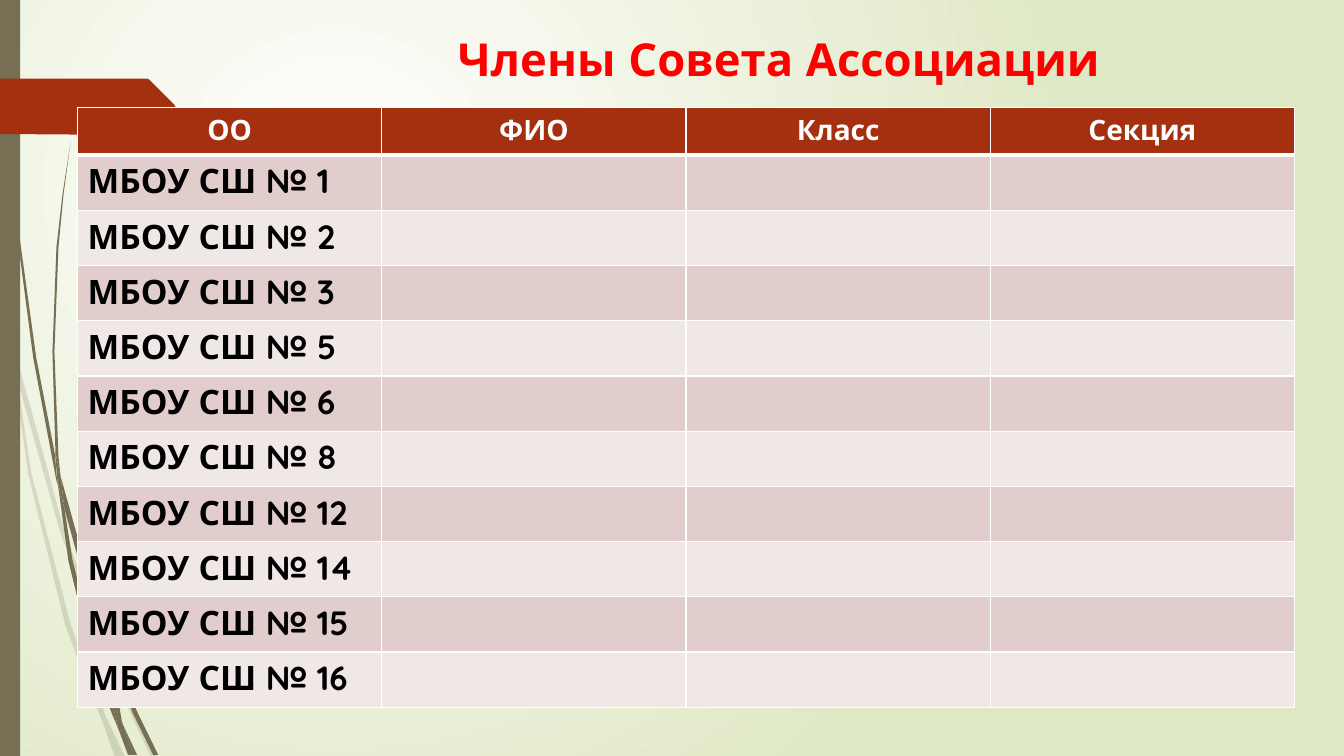
from lxml.etree import SubElement
from pptx import Presentation
from pptx.dml.color import RGBColor
from pptx.enum.shapes import MSO_SHAPE
from pptx.enum.text import MSO_ANCHOR, PP_ALIGN
from pptx.oxml.ns import qn
from pptx.util import Inches, Pt

TITLE = "Члены Совета Ассоциации"
HEADERS = ["ОО", "ФИО", "Класс", "Секция"]
SCHOOLS = [1, 2, 3, 5, 6, 8, 12, 14, 15, 16]
FONT = "Quicksand"
OLIVE, RUST, WHITE = "766F54", "A53010", "FFFFFF"
BANDS = ["E1CDCC", "F0E8E7"]

# Outlines in hundredths of an inch
PALE_WISPS = [
    [(11, 350), (9, 322), (0, 282), (0, 299), (10, 344)],
    [(58, 522), (84, 599), (85, 586), (62, 520), (14, 345), (17, 376)],
    [(92, 607), (88, 596), (88, 610), (123, 694), (150, 751), (155, 751),
     (127, 692)],
    [(119, 751), (124, 751), (105, 711)],
    [(93, 683), (70, 619), (31, 469), (17, 376), (11, 350), (28, 470),
     (65, 621), (92, 693), (101, 714), (99, 707)],
    [(84, 599), (87, 646), (93, 683), (96, 692), (105, 711), (103, 706),
     (91, 646), (88, 610), (88, 608)],
    [(88, 584), (110, 462), (160, 349), (229, 245), (268, 198), (290, 175),
     (312, 154), (312, 153), (289, 175), (268, 197), (228, 244), (158, 348),
     (107, 461), (85, 584), (85, 586), (88, 596)],
    [(101, 714), (114, 751), (119, 751)],
    [(88, 608), (88, 610), (88, 596), (85, 586), (84, 599)],
    [(96, 692), (93, 683), (99, 707), (101, 714), (119, 751), (105, 711)],
]
DARK_WISPS = [
    [(7, 110), (17, 233), (33, 355), (56, 477), (57, 481), (55, 457),
     (55, 453), (36, 355), (19, 232), (8, 109), (5, 48), (4, 0), (3, 0),
     (4, 48)],
    [(88, 592), (106, 645), (106, 633), (106, 631), (93, 590), (60, 472),
     (64, 505)],
    [(113, 649), (110, 641), (111, 656), (132, 708), (152, 749), (157, 749),
     (136, 706)],
    [(110, 691), (98, 657), (72, 556), (64, 505), (57, 477), (68, 557),
     (93, 659), (111, 708), (117, 722), (116, 717)],
    [(60, 472), (58, 453), (54, 349), (58, 245), (63, 193), (70, 141),
     (62, 193), (56, 245), (52, 349), (55, 449)],
    [(133, 749), (136, 749), (122, 719)],
    [(57, 477), (64, 505), (60, 472), (55, 449), (55, 453)],
    [(111, 633), (125, 552), (158, 476), (205, 406), (231, 374), (245, 359),
     (261, 344), (260, 344), (245, 358), (231, 373), (204, 405), (156, 474),
     (122, 551), (106, 631), (110, 641)],
    [(117, 722), (127, 749), (131, 749)],
    [(106, 645), (110, 691), (116, 706), (122, 719), (121, 716), (111, 656),
     (109, 651)],
    [(106, 645), (109, 651), (111, 656), (110, 641), (106, 631), (106, 633)],
    [(116, 706), (110, 691), (116, 717), (117, 722), (130, 749), (133, 749),
     (122, 719)],
]
TAG = [(173, 108), (148, 133), (146, 134), (136, 134), (0, 133), (0, 78),
       (146, 78), (148, 79), (173, 104), (174, 106)]


def rgb(code):
    return RGBColor.from_string(code)


def paint(sp, color, alpha=None):
    """Flat fill without line or shadow; alpha is a percentage."""
    sp.shadow.inherit = False
    sp.fill.solid()
    sp.fill.fore_color.rgb = rgb(color)
    sp.line.fill.background()
    if alpha:
        clr = sp._element.spPr.find(f"{qn('a:solidFill')}/{qn('a:srgbClr')}")
        SubElement(clr, qn("a:alpha"), val=str(alpha * 1000))


def outline(shapes, points, color, alpha=None):
    builder = shapes.build_freeform(*points[0], scale=Inches(0.01))
    builder.add_line_segments(points[1:], close=True)
    paint(builder.convert_to_shape(), color, alpha)


def write(tf, text, size, color, align):
    p = tf.paragraphs[0]
    p.alignment = align
    r = p.add_run()
    r.text = text
    r.font.name, r.font.size, r.font.bold = FONT, Pt(size), True
    r.font.color.rgb = rgb(color)


def style_cell(cell, fill, bottom):
    """White borders, bottom one in points, then the fill."""
    tcPr = cell._tc.get_or_add_tcPr()
    for side, width in (("L", 1), ("R", 1), ("T", 1), ("B", bottom)):
        ln = SubElement(tcPr, qn(f"a:ln{side}"), w=str(Pt(width)))
        SubElement(SubElement(ln, qn("a:solidFill")), qn("a:srgbClr"), val=WHITE)
    cell.fill.solid()
    cell.fill.fore_color.rgb = rgb(fill)


def set_background(slide):
    fill = slide.background.fill
    fill.gradient()
    for stop, color in zip(fill.gradient_stops, (WHITE, "DFE8C4")):
        stop.color.rgb = rgb(color)
    grad = slide._element.find(f".//{qn('a:gradFill')}")
    grad.remove(grad.find(qn("a:lin")))
    circle = SubElement(grad, qn("a:path"), path="circle")
    SubElement(circle, qn("a:fillToRect"),
               l="50000", t="50000", r="100000", b="100000")


def add_council_table(slide):
    rows = [HEADERS] + [[f"МБОУ СШ № {n}", "", "", ""] for n in SCHOOLS]
    table = slide.shapes.add_table(
        len(rows), len(HEADERS), Inches(0.77), Inches(1.07),
        Inches(12.07), Inches(5.95)).table
    for col in table.columns:
        col.width = Inches(12.07 / len(HEADERS))
    for i, texts in enumerate(rows):
        header = i == 0
        table.rows[i].height = Inches(0.47 if header else 0.548)
        for j, text in enumerate(texts):
            cell = table.cell(i, j)
            style_cell(cell, RUST if header else BANDS[(i - 1) % 2],
                       3 if header else 1)
            if header:
                write(cell.text_frame, text, 20, WHITE, PP_ALIGN.CENTER)
            elif text:
                write(cell.text_frame, text, 24, "000000", PP_ALIGN.LEFT)


def main():
    prs = Presentation()
    prs.slide_width, prs.slide_height = Inches(13.33), Inches(7.5)
    slide = prs.slides.add_slide(prs.slide_layouts[6])
    set_background(slide)

    for wisps, alpha in ((PALE_WISPS, 20), (DARK_WISPS, None)):
        group = slide.shapes.add_group_shape()
        for points in wisps:
            outline(group.shapes, points, OLIVE, alpha)
    bar = slide.shapes.add_shape(MSO_SHAPE.RECTANGLE, 0, 0, Inches(0.2), Inches(7.5))
    paint(bar, OLIVE)
    outline(slide.shapes, TAG, RUST)

    title = slide.shapes.add_textbox(Inches(2.85), Inches(0.23),
                                     Inches(9.75), Inches(0.69))
    tf = title.text_frame
    tf.word_wrap = True
    tf.vertical_anchor = MSO_ANCHOR.MIDDLE
    write(tf, TITLE, 32.4, "FF0000", PP_ALIGN.CENTER)
    add_council_table(slide)
    prs.save("out.pptx")


if __name__ == "__main__":
    main()
